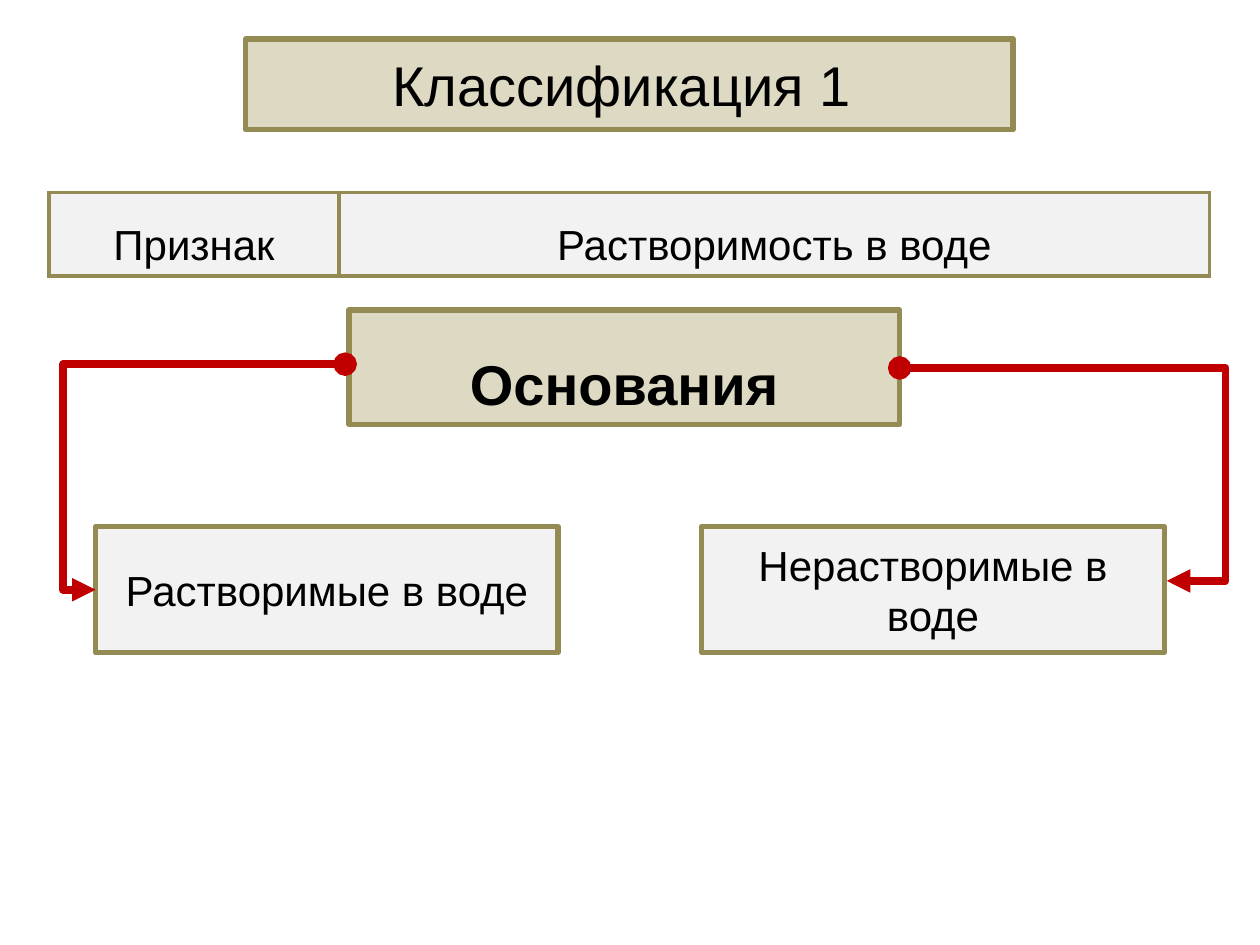
import pptx
import pptx.util
import pptx.dml.color
import pptx.enum.shapes
import pptx.enum.text
import pptx.oxml
import pptx.oxml.ns

Inches = pptx.util.Inches
Pt = pptx.util.Pt
SHAPES = pptx.enum.shapes.MSO_SHAPE
ANCHORS = pptx.enum.text.MSO_ANCHOR
SAND, PALE, OLIVE, RED, BLACK = "DDD9C3", "F2F2F2", "948A54", "C00000", "000000"


def rgb(value):
    """Return the colour for a hex string."""
    return pptx.dml.color.RGBColor.from_string(value)


def add_xml(parent, tag, **attributes):
    """Append a drawing element to the parent and return it."""
    element = pptx.oxml.parse_xml(f"<a:{tag} {pptx.oxml.ns.nsdecls('a')}/>")
    for key, value in attributes.items():
        element.set(key, str(value))
    parent.append(element)
    return element


def write(frame, wording, size, bold=False, spacing=None):
    """Write one centred paragraph into a text frame."""
    paragraph = frame.paragraphs[0]
    run = paragraph.add_run()
    run.text = wording
    run.font.color.rgb = rgb(BLACK)
    formats = {
        paragraph: {"alignment": pptx.enum.text.PP_ALIGN.CENTER, "line_spacing": spacing},
        run.font: {"name": "Arial", "size": Pt(size), "bold": bold},
    }
    for target, values in formats.items():
        for key, value in values.items():
            setattr(target, key, value)


def draw_line(line, color, width):
    """Give a line its colour, its width and round joins."""
    line.color.rgb = rgb(color)
    line.width = Pt(width)
    return add_xml(line._get_or_add_ln(), "round").getparent()


def add_panel(slide, box, wording, fill, size, outline=SHAPES.RECTANGLE,
              anchor=ANCHORS.MIDDLE, **text_format):
    """Place an olive-edged panel with its wording in the box."""
    panel = slide.shapes.add_shape(outline, *map(Inches, box))
    panel.shadow.inherit = False
    panel.fill.solid()
    panel.fill.fore_color.rgb = rgb(fill)
    draw_line(panel.line, OLIVE, 3)
    panel.text_frame.word_wrap = True
    panel.text_frame.vertical_anchor = anchor
    write(panel.text_frame, wording, size, **text_format)
    return panel


def add_title(slide, box):
    """Place the title panel in the box."""
    title = add_panel(slide, box, "Классификация 1 ", SAND, 32, SHAPES.ROUNDED_RECTANGLE)
    title.adjustments[0] = 0


def add_feature_table(slide, box):
    """Place the one-row table of the classifying feature in the box."""
    columns = {"Признак": 2.3, "Растворимость в воде": box[2] - 2.3}
    table = slide.shapes.add_table(1, len(columns), *map(Inches, box)).table
    table.first_row = table.horz_banding = False
    for index, (wording, width) in enumerate(columns.items()):
        table.columns[index].width = Inches(width)
        cell = table.cell(0, index)
        write(cell.text_frame, wording, 24, spacing=1.5)
        properties = cell._tc.get_or_add_tcPr()
        for side in ("lnL", "lnR", "lnT", "lnB"):
            border = add_xml(properties, side, w=Pt(2.25))
            add_xml(add_xml(border, "solidFill"), "srgbClr", val=OLIVE)
        cell.fill.solid()
        cell.fill.fore_color.rgb = rgb(PALE)


def add_branch(slide, start, end, bend):
    """Draw a bent arrow whose middle leg lies at bend times its width."""
    branch = slide.shapes.add_connector(
        pptx.enum.shapes.MSO_CONNECTOR.ELBOW, *map(Inches, start + end))
    properties = branch._element.spPr
    guides = properties.find(pptx.oxml.ns.qn("a:prstGeom")).get_or_add_avLst()
    add_xml(guides, "gd", name="adj1", fmla=f"val {round(bend * 100000)}")
    line = draw_line(branch.line, RED, 4.5)
    add_xml(line, "headEnd", type="oval")
    add_xml(line, "tailEnd", type="triangle")
    add_xml(properties, "effectLst")


def add_bases_tree(slide, box):
    """Place the bases and their two classes in the box."""
    left, top, width, height = box
    class_width, class_height = 3.67, 1
    class_top = top + height - class_height
    right = left + width
    classes = {"Растворимые в воде": left, "Нерастворимые в воде": right - class_width}
    for wording, class_left in classes.items():
        add_panel(slide, (class_left, class_top, class_width, class_height), wording, PALE, 24)
    add_panel(slide, (left + 2.01, top, 4.37, 0.91), "Основания", SAND, 32,
              anchor=ANCHORS.TOP, bold=True, spacing=1.5)
    add_branch(slide, (left + 6.38, top + 0.46), (right + 0.02, class_top + 0.43), 1.22)
    add_branch(slide, (left + 1.98, top + 0.43), (left, class_top + 0.5), 1.13)


def main():
    """Build the slide and save it."""
    deck = pptx.Presentation()
    deck.slide_width, deck.slide_height = Inches(10), Inches(7.5)
    slide = deck.slides.add_slide(deck.slide_layouts[6])
    add_title(slide, (1.95, 0.31, 6.09, 0.72))
    add_feature_table(slide, (0.39, 1.53, 9.21, 0.66))
    add_bases_tree(slide, (0.76, 2.46, 8.48, 2.72))
    deck.save("out.pptx")


if __name__ == "__main__":
    main()
